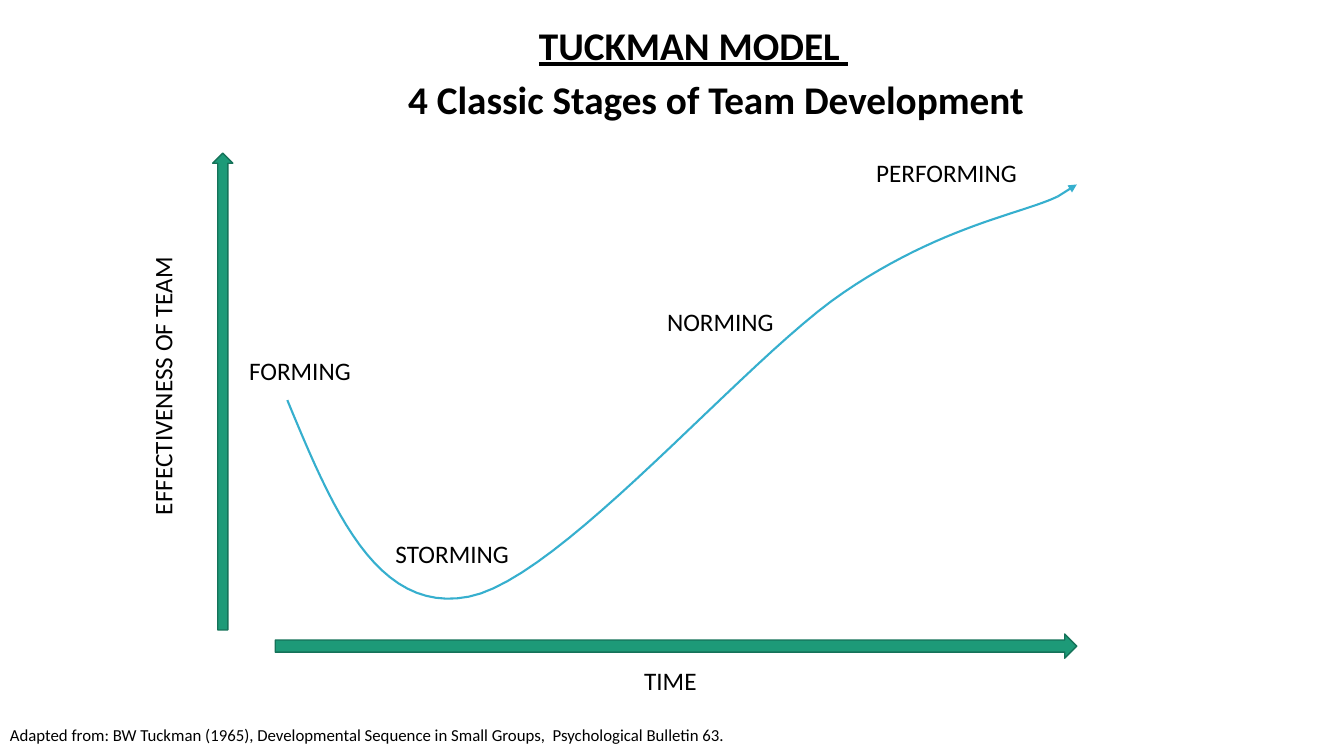
"""Build the Tuckman team development slide."""
from dataclasses import dataclass

from lxml import etree
from pptx import Presentation, util as u
from pptx.dml.color import RGBColor
from pptx.enum import shapes, text
from pptx.oxml.ns import qn

PX = 9144
BLACK, GREEN, DARK_GREEN, BLUE = "000000", "1D9A78", "157259", "36AFCE"
LEFT, CENTER = text.PP_ALIGN.LEFT, text.PP_ALIGN.CENTER
STEPS = 24


@dataclass
class Label:
    """A line of text with its box in px."""
    words: str
    x: int
    y: int
    w: int = 171
    h: int = 40
    size: int = 18
    bold: bool = False
    underline: bool = False
    align: text.PP_ALIGN = CENTER
    rotation: int = 0
    wrap: bool = True
    anchor: text.MSO_ANCHOR = text.MSO_ANCHOR.TOP


@dataclass
class Axis:
    """A block arrow with its box in px."""
    kind: shapes.MSO_SHAPE
    x: int
    y: int
    w: int
    h: int


TITLE = Label("TUCKMAN MODEL ", 463, 24, 450, size=28, bold=True,
              underline=True, anchor=text.MSO_ANCHOR.MIDDLE)
LABELS = [
    Label("4 Classic Stages of Team Development ", 391, 70, 638, 57, 28, bold=True),
    Label("TIME", 629, 655, align=LEFT),
    Label("EFFECTIVENESS OF TEAM", 10, 350, 302, align=LEFT, rotation=270),
    Label("FORMING", 212, 348),
    Label("STORMING", 363, 529),
    Label("NORMING", 629, 299),
    Label("PERFORMING", 859, 151, align=LEFT),
    Label("Adapted from: BW Tuckman (1965), Developmental Sequence in Small Groups,"
          "  Psychological Bulletin 63.", 0, 714, 737, 30, 12, align=LEFT, wrap=False),
]
AXES = [
    Axis(shapes.MSO_SHAPE.UP_ARROW, 211, 152, 20, 473),
    Axis(shapes.MSO_SHAPE.RIGHT_ARROW, 273, 629, 795, 24),
]
CURVE = [(285, 397), (329, 503), (373, 610), (465, 592), (557, 574),
         (739, 356), (837, 290), (934, 224), (1014, 212), (1049, 195)]
ARROW_TIP = (1068, 183)


def color(value: str) -> RGBColor:
    """Turn a hex string into a colour."""
    return RGBColor.from_string(value)


def apply(target: object, formats: dict) -> None:
    """Set each attribute named in formats."""
    for name, value in formats.items():
        setattr(target, name, value)


def style_line(line, value: str, width: float) -> None:
    """Set the colour and width of a line."""
    line.color.rgb = color(value)
    line.width = u.Pt(width)


def write_label(sp, label: Label) -> None:
    """Place a text shape and format its words."""
    apply(sp, dict(left=label.x * PX, top=label.y * PX, width=label.w * PX,
                   height=label.h * PX, rotation=label.rotation))
    tf = sp.text_frame
    apply(tf, dict(word_wrap=label.wrap, auto_size=text.MSO_AUTO_SIZE.NONE,
                   vertical_anchor=label.anchor))
    p = tf.paragraphs[0]
    p.alignment = label.align
    r = p.add_run()
    r.text = label.words
    apply(r.font, dict(name="Calibri", size=u.Pt(label.size), bold=label.bold,
                       underline=label.underline))
    r.font.color.rgb = color(BLACK)


def add_axis(s, axis: Axis) -> None:
    """Draw one green block arrow."""
    sp = s.shapes.add_shape(axis.kind, axis.x * PX, axis.y * PX, axis.w * PX, axis.h * PX)
    sp.shadow.inherit = False
    sp.fill.solid()
    sp.fill.fore_color.rgb = color(GREEN)
    style_line(sp.line, DARK_GREEN, 1)


def bezier(a: float, b: float, c: float, d: float, t: float) -> int:
    """Return one EMU coordinate of a cubic curve given in px."""
    v = 1 - t
    return round(PX * (a * v**3 + 3 * b * v * v * t + 3 * c * v * t * t + d * t**3))


def add_curve(s) -> None:
    """Draw the effectiveness curve through its cubic segments."""
    points = [tuple(bezier(*axis, step / STEPS) for axis in zip(*CURVE[i:i + 4]))
              for i in range(0, len(CURVE) - 1, 3) for step in range(1, STEPS + 1)]
    x, y = CURVE[0]
    builder = s.shapes.build_freeform(x * PX, y * PX)
    builder.add_line_segments(points, close=False)
    sp = builder.convert_to_shape()
    sp.shadow.inherit = False
    sp.fill.background()
    style_line(sp.line, BLUE, 1.5)


def add_arrowhead(s) -> None:
    """Draw the arrow that ends the curve."""
    ends = [n * PX for n in (*CURVE[-1], *ARROW_TIP)]
    sp = s.shapes.add_connector(shapes.MSO_CONNECTOR.STRAIGHT, *ends)
    style_line(sp.line, BLUE, 1.5)
    etree.SubElement(sp.line._get_or_add_ln(), qn("a:tailEnd"), type="triangle")
    etree.SubElement(sp._element.spPr, qn("a:effectLst"))


def main() -> None:
    """Build and save the slide."""
    prs = Presentation()
    apply(prs, dict(slide_width=1333 * PX, slide_height=750 * PX))
    s = prs.slides.add_slide(prs.slide_layouts[5])
    write_label(s.shapes.title, TITLE)
    for axis in AXES:
        add_axis(s, axis)
    add_curve(s)
    add_arrowhead(s)
    for label in LABELS:
        write_label(s.shapes.add_textbox(0, 0, PX, PX), label)
    prs.save("out.pptx")


if __name__ == "__main__":
    main()
